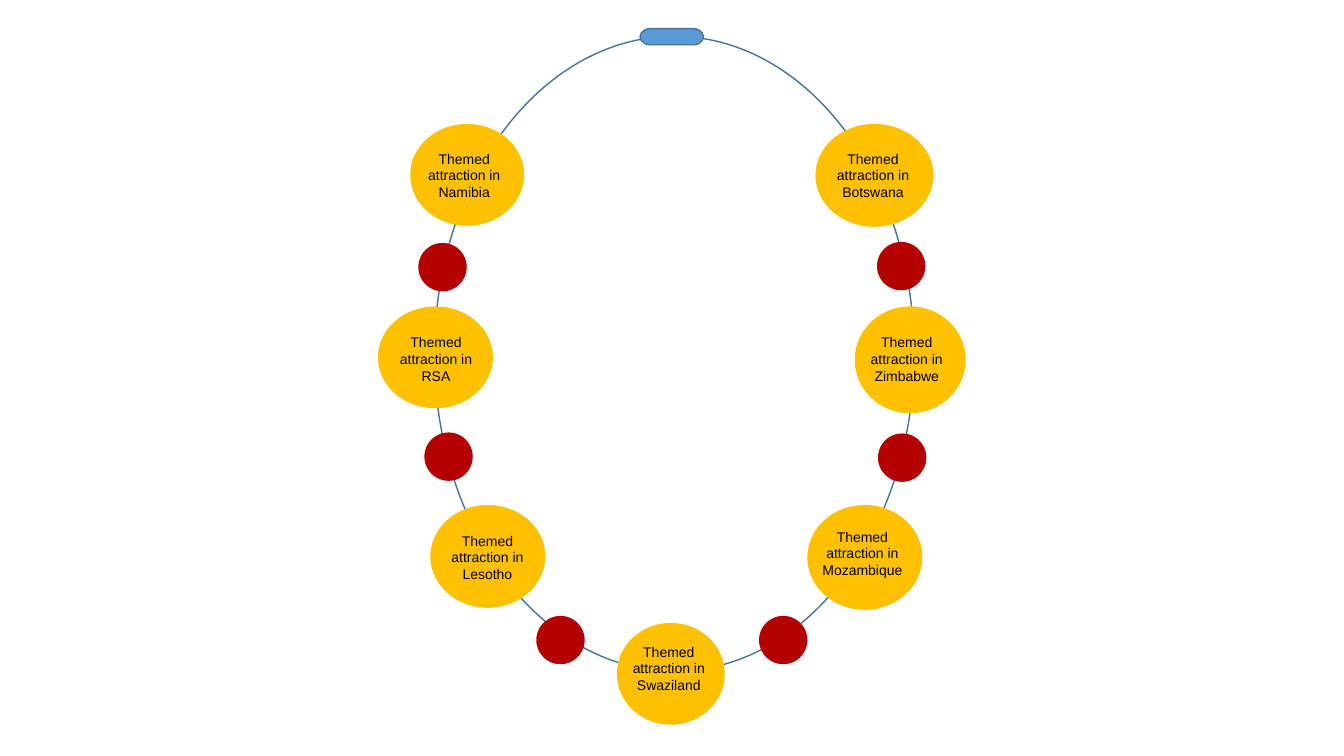
from pptx import Presentation
from pptx import util as u
from pptx.dml.color import RGBColor
from pptx.enum import shapes, text

CELL = u.Inches(0.1)
COLS, ROWS = 133.33, 75
HUES = {"gold": "FFC000", "red": "B40000", "blue": "5B9BD5",
        "edge": "43739E", "ink": "000000"}
KIND = shapes.MSO_SHAPE

STOPS = [
    ("Namibia", (40.7, 12.3, 11.3, 10.1), (41.1, 14.4, 9.9, 6.5)),
    ("Botswana", (80.9, 12.3, 11.7, 10.2), (81.5, 14.4, 10.2, 6.5)),
    ("Zimbabwe", (84.8, 30.4, 11, 10.6), (84.8, 32.6, 10.3, 6.5)),
    ("Mozambique", (80.1, 50.1, 11.4, 10.4), (80.1, 51.9, 10.9, 7.8)),
    ("Swaziland", (61.2, 61.8, 10.7, 10.1), (61.2, 63.3, 10.3, 6.5)),
    ("Lesotho", (42.7, 50.1, 11.4, 10.2), (43.4, 52.3, 9.9, 6.5)),
    ("RSA", (37.5, 30.4, 11.4, 10.1), (38.3, 32.6, 9.9, 6.5)),
]
BEADS = [(41.5, 24.1), (42.1, 42.9), (53.2, 61.1),
         (75.3, 61.1), (87.1, 43), (87, 24)]
BEAD = 4.8


def hue(name):
    return RGBColor.from_string(HUES[name])


def grid(box):
    return [round(n * CELL) for n in box]


def form(host, kind, box, fill=None, edge=None):
    item = host.shapes.add_shape(kind, *grid(box))
    item.shadow.inherit = False
    if fill:
        item.fill.solid()
        item.fill.fore_color.rgb = hue(fill)
    else:
        item.fill.background()
    if edge:
        item.line.color.rgb = hue(edge)
        item.line.width = u.Pt(1)
    else:
        item.line.fill.background()


def label(host, words, box):
    frame = host.shapes.add_textbox(*grid(box)).text_frame
    frame.word_wrap = True
    frame.text = words
    line = frame.paragraphs[0]
    line.alignment = text.PP_ALIGN.CENTER
    font = line.runs[0].font
    font.name = "Arial"
    font.size = u.Pt(10)
    font.color.rgb = hue("ink")


def string(slide):
    group = slide.shapes.add_group_shape()
    form(group, KIND.OVAL, (43.1, 3.6, 47.6, 63), edge="edge")
    form(group, KIND.FLOWCHART_TERMINATOR, (63.5, 2.85, 6.3, 1.6),
         "blue", "edge")


def stop(slide, land, disc, box):
    group = slide.shapes.add_group_shape()
    form(group, KIND.OVAL, disc, "gold")
    label(group, f"Themed attraction in {land}", box)


def main():
    deck = Presentation()
    deck.slide_width, deck.slide_height = grid((COLS, ROWS))
    slide = deck.slides.add_slide(deck.slide_layouts[6])
    string(slide)
    for left, top in BEADS:
        form(slide, KIND.OVAL, (left, top, BEAD, BEAD), "red")
    for land, disc, box in STOPS:
        stop(slide, land, disc, box)
    deck.save("out.pptx")


if __name__ == "__main__":
    main()
